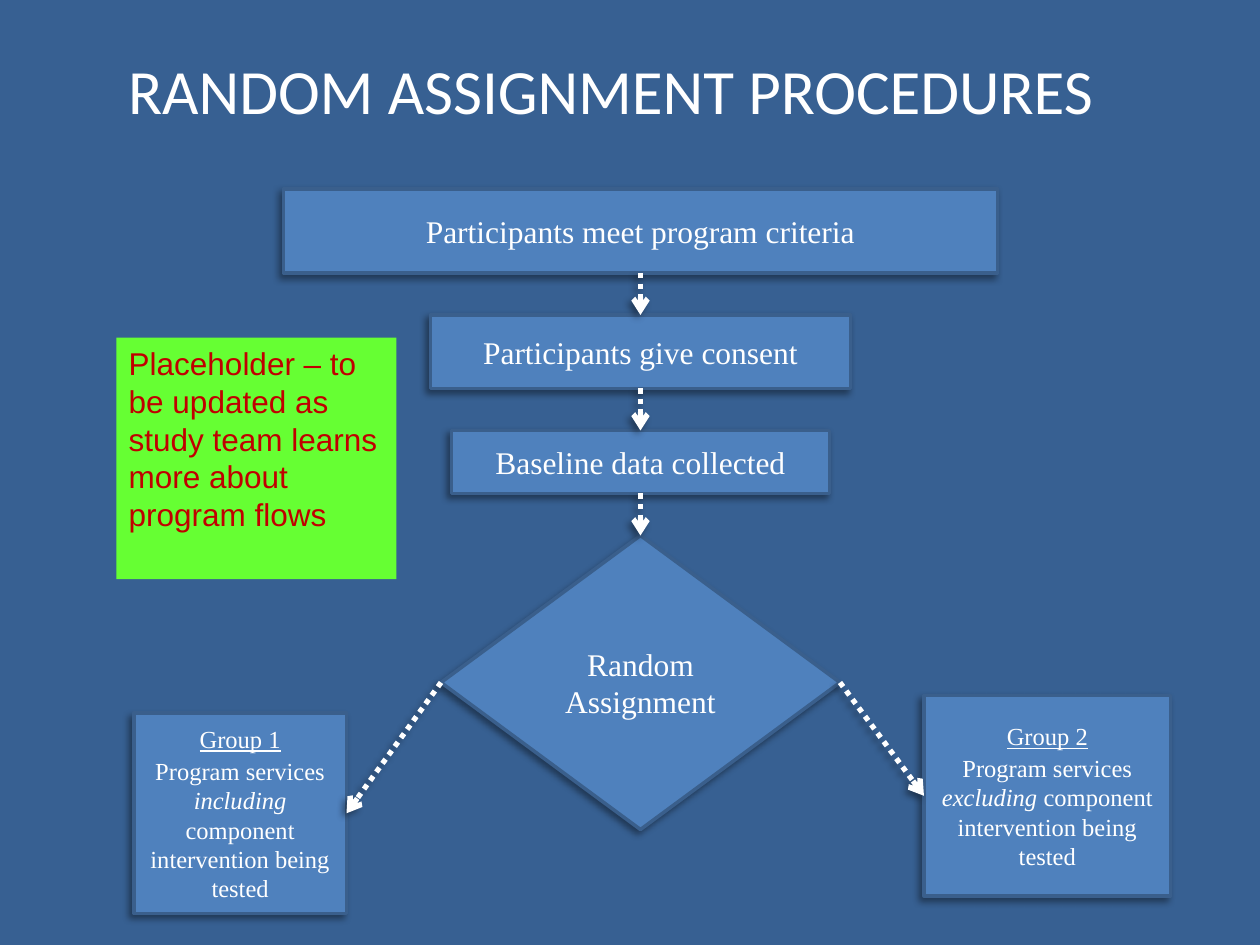
"""Build the random assignment flow chart slide."""
from dataclasses import dataclass

from lxml.etree import SubElement
from pptx import Presentation
from pptx.dml.color import RGBColor
from pptx.enum.dml import MSO_LINE
from pptx.enum.shapes import MSO_CONNECTOR, MSO_SHAPE
from pptx.enum.text import MSO_ANCHOR, MSO_AUTO_SIZE, PP_ALIGN
from pptx.oxml.ns import qn
from pptx.shapes.autoshape import Shape
from pptx.slide import Slide
from pptx.text.text import Font
from pptx.util import Pt

COLORS = {
    "back": "376092",
    "box": "4F81BD",
    "edge": "3A5F8C",
    "white": "FFFFFF",
    "black": "000000",
    "note": "66FF33",
    "red": "C00000",
}
SERIF = "Times New Roman"
MID = 366
TOP, LEFT, BOTTOM, RIGHT = range(4)


@dataclass
class Node:
    left: float
    top: float
    width: float
    height: float
    lines: list[list[tuple[str, str]]]
    size: float = 18
    kind: MSO_SHAPE = MSO_SHAPE.RECTANGLE


def step(top: float, width: float, height: float, text: str,
         kind: MSO_SHAPE = MSO_SHAPE.RECTANGLE) -> Node:
    return Node(MID - width / 2, top, width, height, [[(text, "")]], kind=kind)


def group(left: float, top: float, width: float, name: str, verb: str) -> Node:
    body = [("Program services ", ""), (verb, "italic"),
            (" component intervention being tested", "")]
    return Node(left, top, width, 114.5, [[(name, "underline")], body], 14)


STEPS = [
    step(108, 408, 48, "Participants meet program criteria"),
    step(180, 240, 42, "Participants give consent"),
    step(246, 216, 36, "Baseline data collected"),
    step(306, 228, 168, "Random Assignment", MSO_SHAPE.DIAMOND),
]
GROUPS = [
    (group(76.5, 407.5, 121.5, "Group 1", "including"), LEFT, RIGHT),
    (group(528, 397.5, 141, "Group 2", "excluding"), RIGHT, LEFT),
]


def tint(name: str) -> RGBColor:
    return RGBColor.from_string(COLORS[name])


def style(font: Font, face: str, size: float, color: str) -> None:
    font.name = face
    font.size = Pt(size)
    font.color.rgb = tint(color)


def add_shade(effects) -> None:
    shade = SubElement(effects, qn("a:outerShdw"), blurRad=str(Pt(4)),
                       dist=str(Pt(3)), dir="8100000", rotWithShape="0")
    color = SubElement(shade, qn("a:srgbClr"), val=COLORS["black"])
    SubElement(color, qn("a:alpha"), val="40000")


def add_box(slide: Slide, kind: MSO_SHAPE, left: float, top: float,
            width: float, height: float, fill: str) -> Shape:
    box = slide.shapes.add_shape(kind, Pt(left), Pt(top), Pt(width), Pt(height))
    box.shadow.inherit = False
    box.fill.solid()
    box.fill.fore_color.rgb = tint(fill)
    box.text_frame.word_wrap = True
    box.text_frame.auto_size = MSO_AUTO_SIZE.NONE
    return box


def add_node(slide: Slide, node: Node) -> Shape:
    box = add_box(slide, node.kind, node.left, node.top,
                  node.width, node.height, "box")
    box.line.color.rgb = tint("edge")
    box.line.width = Pt(2)
    add_shade(box._element.spPr.find(qn("a:effectLst")))
    frame = box.text_frame
    frame.vertical_anchor = MSO_ANCHOR.MIDDLE
    for index, line in enumerate(node.lines):
        para = frame.add_paragraph() if index else frame.paragraphs[0]
        para.alignment = PP_ALIGN.CENTER
        if index:
            para.space_before = Pt(1.5)
        for text, look in line:
            run = para.add_run()
            run.text = text
            style(run.font, SERIF, node.size, "white")
            run.font.italic = look == "italic"
            run.font.underline = look == "underline"
    return box


def add_arrow(slide: Slide, start: Shape, out: int, end: Shape, into: int) -> None:
    arrow = slide.shapes.add_connector(MSO_CONNECTOR.STRAIGHT, 0, 0, 0, 0)
    arrow.begin_connect(start, out)
    arrow.end_connect(end, into)
    arrow.line.color.rgb = tint("white")
    arrow.line.width = Pt(3)
    arrow.line.dash_style = MSO_LINE.ROUND_DOT
    props = arrow._element.spPr
    SubElement(props.find(qn("a:ln")), qn("a:tailEnd"), type="arrow")
    add_shade(SubElement(props, qn("a:effectLst")))


def add_title(slide: Slide) -> None:
    title = slide.shapes.title
    title.left, title.top = Pt(66), Pt(6)
    title.width, title.height = Pt(648), Pt(90)
    frame = title.text_frame
    frame.text = "RANDOM ASSIGNMENT PROCEDURES"
    frame.vertical_anchor = MSO_ANCHOR.MIDDLE
    frame.paragraphs[0].alignment = PP_ALIGN.LEFT
    style(frame.paragraphs[0].runs[0].font, "Calibri", 36, "white")


def add_note(slide: Slide) -> None:
    note = add_box(slide, MSO_SHAPE.RECTANGLE, 66.5, 193, 160, 138, "note")
    note.line.fill.background()
    frame = note.text_frame
    frame.text = ("Placeholder – to be updated as study team learns "
                  "more about program flows")
    frame.vertical_anchor = MSO_ANCHOR.TOP
    frame.paragraphs[0].alignment = PP_ALIGN.LEFT
    style(frame.paragraphs[0].runs[0].font, "Arial", 18, "red")


def main() -> None:
    deck = Presentation()
    deck.slide_width, deck.slide_height = Pt(720), Pt(540)
    slide = deck.slides.add_slide(deck.slide_layouts[5])
    slide.background.fill.solid()
    slide.background.fill.fore_color.rgb = tint("back")
    add_title(slide)
    boxes = [add_node(slide, node) for node in STEPS]
    for start, end in zip(boxes, boxes[1:]):
        add_arrow(slide, start, BOTTOM, end, TOP)
    for node, out, into in GROUPS:
        add_arrow(slide, boxes[-1], out, add_node(slide, node), into)
    add_note(slide)
    deck.save("out.pptx")


if __name__ == "__main__":
    main()
